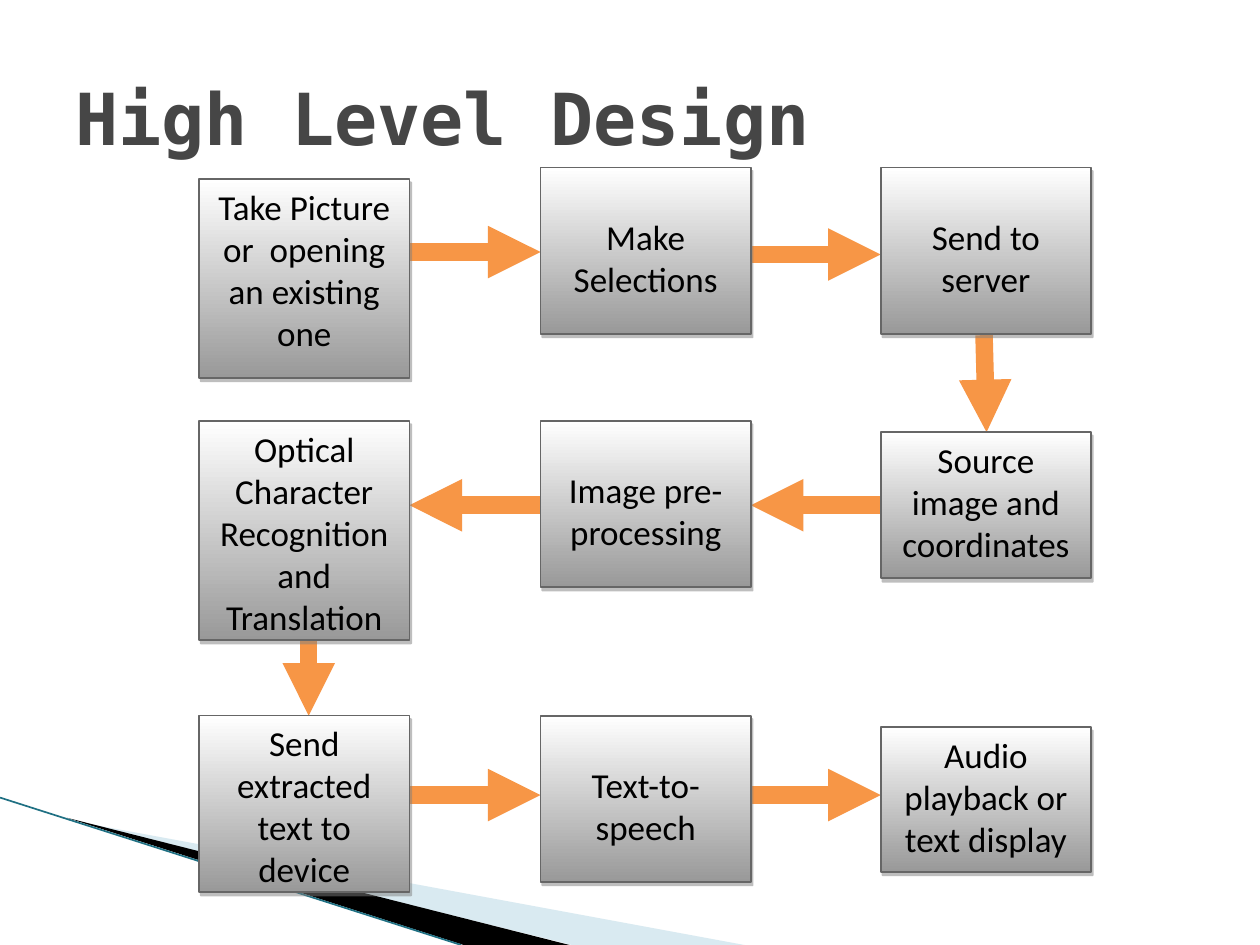
"""Build the High Level Design flow chart slide."""
from lxml.etree import SubElement as Sub
from pptx import Presentation
from pptx.dml.color import RGBColor
from pptx.enum.shapes import MSO_CONNECTOR as Conn, MSO_SHAPE as Shape
from pptx.enum.text import MSO_ANCHOR as Anchor, PP_ALIGN as Align
from pptx.oxml.ns import qn
from pptx.util import Inches, Pt

WHITE = RGBColor(0xFF, 0xFF, 0xFF)
BLACK = RGBColor(0, 0, 0)
SILVER = RGBColor(0x99, 0x99, 0x99)
EDGE = RGBColor(0x66, 0x66, 0x66)
SHADE = RGBColor(0x7F, 0x7F, 0x7F)
ORANGE = RGBColor(0xF7, 0x96, 0x46)
PALE = RGBColor(0xA0, 0xCB, 0xDC)
TEAL = RGBColor(0x1F, 0x70, 0x83)
SLATE = RGBColor(0x46, 0x46, 0x46)

deck = Presentation()
deck.slide_width, deck.slide_height = Inches(10), Inches(7.5)
slide = deck.slides.add_slide(deck.slide_layouts[6])
shapes = slide.shapes


def add_line(start, end, color, width):
    line = shapes.add_connector(Conn.STRAIGHT, *map(Inches, start + end))
    line.line.color.rgb = color
    line.line.width = Pt(width)
    Sub(line._element.spPr, qn("a:effectLst"))
    return line


def set_alpha(color, percent):
    Sub(color, qn("a:alpha"), val=str(percent * 1000))


wedges = [
    ([(0.55, 6.51), (5.91, 7.5), (4.54, 7.5)], PALE, 40),
    ([(0.53, 6.49), (4.52, 7.5), (3.68, 7.5)], BLACK, 100),
]
for points, color, alpha in wedges:
    (x, y), *rest = points
    pen = shapes.build_freeform(Inches(x), Inches(y), scale=1.0)
    pen.add_line_segments([(Inches(x), Inches(y)) for x, y in rest])
    wedge = pen.convert_to_shape()
    wedge.shadow.inherit = False
    wedge.line.fill.background()
    wedge.fill.solid()
    wedge.fill.fore_color.rgb = color
    set_alpha(wedge._element.spPr.find(".//" + qn("a:srgbClr")), alpha)
add_line((0, 6.33), (3.66, 7.5), TEAL, 0.95)

title = shapes.add_textbox(Inches(0.5), Inches(0.3), Inches(9), Inches(1.25))
frame = title.text_frame
frame.word_wrap = True
frame.vertical_anchor = Anchor.MIDDLE
para = frame.paragraphs[0]
para.text = "High Level Design"
font = para.font
font.name, font.size, font.bold = "DejaVu Sans Mono", Pt(41), True
font.color.rgb = SLATE

LEFT, MID, RIGHT = 1.58, 4.29, 6.99
WIDE = 1.67

arrows = [
    ((LEFT + WIDE, 2), (MID, 2)),
    ((MID + WIDE, 2.02), (RIGHT, 2.02)),
    ((7.81, 2.66), (7.83, 3.43)),
    ((RIGHT, 4.01), (MID + WIDE, 4.01)),
    ((MID, 4.01), (LEFT + WIDE, 4.01)),
    ((2.45, 5.01), (2.45, 5.68)),
    ((LEFT + WIDE, 6.31), (MID, 6.31)),
    ((MID + WIDE, 6.31), (RIGHT, 6.31)),
]
for start, end in arrows:
    arrow = add_line(start, end, ORANGE, 10)
    Sub(arrow.line._get_or_add_ln(), qn("a:tailEnd"), type="triangle")

LOW, HIGH = 0.05, 0.38
boxes = [
    (LEFT, 1.42, 1.58, LOW, "Take Picture or  opening an existing one"),
    (MID, 1.33, 1.32, HIGH, "Make Selections"),
    (RIGHT, 1.33, 1.32, HIGH, "Send to server"),
    (RIGHT, 3.43, 1.16, LOW, "Source image and coordinates"),
    (MID, 3.34, 1.32, HIGH, "Image pre-processing"),
    (LEFT, 3.34, 1.74, LOW, "Optical Character Recognition and Translation"),
    (LEFT, 5.68, 1.4, LOW, "Send extracted text to device"),
    (MID, 5.68, 1.32, HIGH, "Text-to-speech"),
    (RIGHT, 5.77, 1.15, LOW, "Audio playback or text display"),
]
for x, y, tall, inset, text in boxes:
    box = shapes.add_shape(Shape.RECTANGLE, *map(Inches, (x, y, WIDE, tall)))
    box.fill.gradient()
    box.fill.gradient_angle = 270
    for stop, color, spot in zip(box.fill.gradient_stops, (WHITE, SILVER), (0, 1)):
        stop.color.rgb = color
        stop.position = spot
    box.line.color.rgb = EDGE
    box.line.width = Pt(1)
    box.shadow.inherit = False
    glow = Sub(box._element.spPr.find(qn("a:effectLst")), qn("a:outerShdw"),
               dist=str(Pt(2.2)), dir=str(63 * 60000), rotWithShape="0")
    set_alpha(Sub(glow, qn("a:srgbClr"), val=str(SHADE)), 50)
    frame = box.text_frame
    frame.word_wrap = True
    frame.vertical_anchor = Anchor.TOP
    frame.margin_top = Inches(inset)
    para = frame.paragraphs[0]
    para.text = text
    para.alignment = Align.CENTER
    para.space_after = Pt(10)
    para.font.name, para.font.size = "Calibri", Pt(20)
    para.font.color.rgb = BLACK

deck.save("out.pptx")
